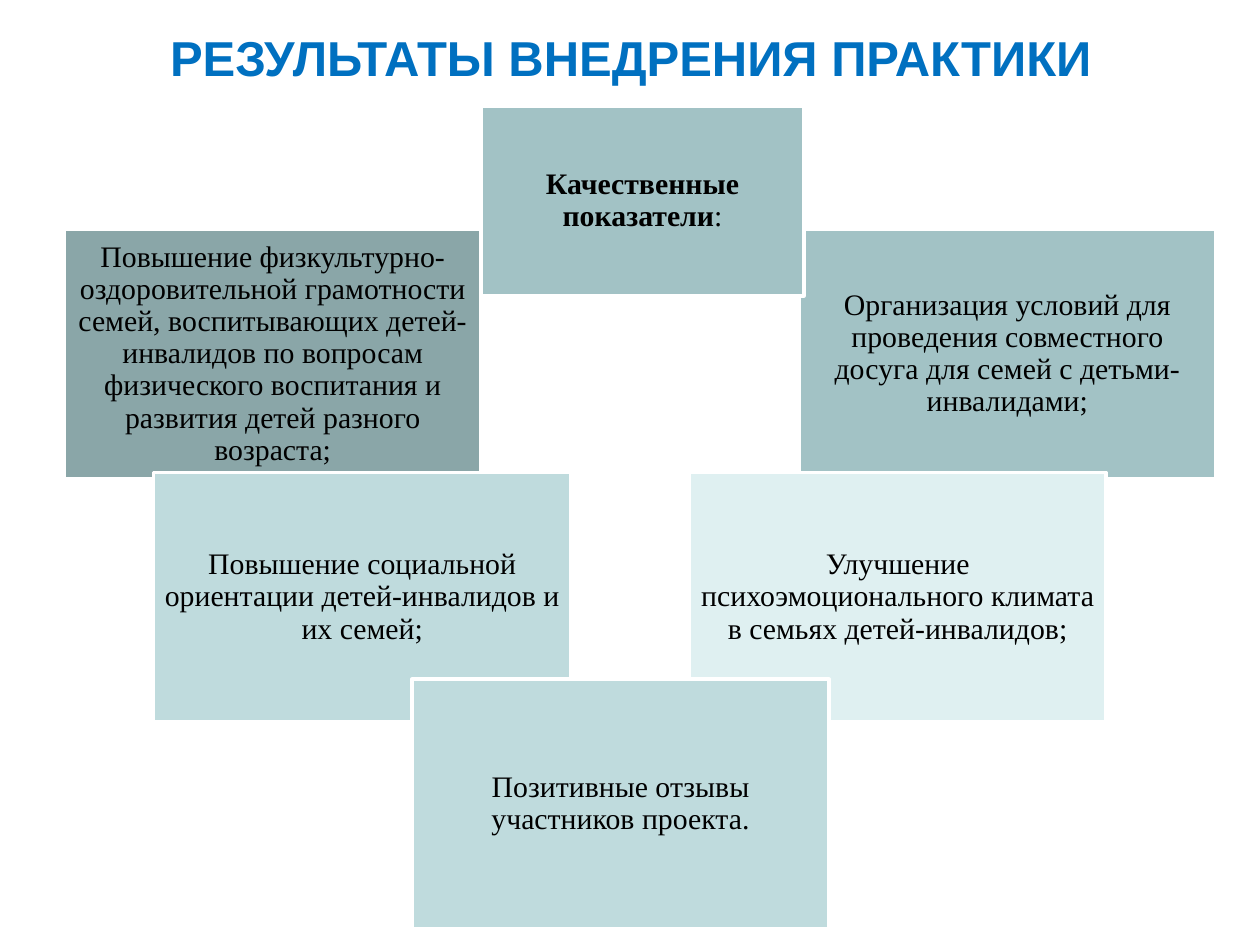
import pptx
import pptx.dml.color
import pptx.enum.shapes
import pptx.enum.text
import pptx.util

RGB = pptx.dml.color.RGBColor
BLUE = RGB(0x00, 0x70, 0xC0)
BLACK = RGB(0x00, 0x00, 0x00)
WHITE = RGB(0xFF, 0xFF, 0xFF)
SLATE = RGB(0x8A, 0xA6, 0xA8)
TEAL = RGB(0xA2, 0xC2, 0xC5)
MIST = RGB(0xBF, 0xDB, 0xDD)
PALE = RGB(0xDF, 0xF0, 0xF1)

SCALE = 9144
WIDE, HIGH = 331, 198
CARDS = [
    (51, 182, SLATE, "Повышение физкультурно-оздоровительной грамотности семей, "
     "воспитывающих детей-инвалидов по вопросам физического воспитания "
     "и развития детей разного возраста;"),
    (634, 182, TEAL, "Организация условий для проведения совместного досуга "
     "для семей с детьми-инвалидами;"),
    (122, 375, MIST, "Повышение социальной ориентации детей-инвалидов и их семей;"),
    (547, 375, PALE, "Улучшение психоэмоционального климата в семьях детей-инвалидов;"),
    (327, 539, MIST, "Позитивные отзывы участников проекта."),
]


class Deck:
    """Holds the style and the current slide, and draws each kind of element."""

    def __init__(self):
        self.file = pptx.Presentation()
        self.file.slide_width, self.file.slide_height = self.px(1000, 750)
        self.slide = self.file.slides.add_slide(self.file.slide_layouts[6])

    def px(self, *sizes):
        return [pptx.util.Emu(size * SCALE) for size in sizes]

    def style(self, run, font, size, color, bold=False):
        run.font.name = font
        run.font.size = pptx.util.Pt(size)
        run.font.color.rgb = color
        run.font.bold = bold

    def inset(self, frame, side, top):
        frame.margin_left = frame.margin_right = self.px(side)[0]
        frame.margin_top = frame.margin_bottom = self.px(top)[0]
        frame.word_wrap = True

    def title(self, x, y, w, h, text):
        frame = self.slide.shapes.add_textbox(*self.px(x, y, w, h)).text_frame
        self.inset(frame, 10, 9)
        frame.text = text
        para = frame.paragraphs[0]
        para.alignment = pptx.enum.text.PP_ALIGN.CENTER
        self.style(para.runs[0], "Arial", 28, BLUE, True)

    def card(self, x, y, w, h, fill, text):
        shape = self.slide.shapes.add_shape(
            pptx.enum.shapes.MSO_SHAPE.RECTANGLE, *self.px(x, y, w, h))
        shape.shadow.inherit = False
        shape.fill.solid()
        shape.fill.fore_color.rgb = fill
        shape.line.color.rgb = WHITE
        shape.line.width = pptx.util.Pt(2)
        frame = shape.text_frame
        self.inset(frame, 7, 7)
        frame.vertical_anchor = pptx.enum.text.MSO_ANCHOR.MIDDLE
        frame.text = text
        para = frame.paragraphs[0]
        para.alignment = pptx.enum.text.PP_ALIGN.CENTER
        para.line_spacing = 0.9
        self.style(para.runs[0], "Times New Roman", 17, BLACK)
        return para


def main():
    deck = Deck()
    deck.title(51, 13, 899, 77, "РЕЗУЛЬТАТЫ ВНЕДРЕНИЯ ПРАКТИКИ")
    for x, y, fill, text in CARDS:
        deck.card(x, y, WIDE, HIGH, fill, text)
    head = deck.card(382, 84, 256, 151, TEAL, "Качественные показатели")
    head.runs[0].font.bold = True
    colon = head.add_run()
    colon.text = ":"
    deck.style(colon, "Times New Roman", 17, BLACK)
    deck.file.save("out.pptx")


if __name__ == "__main__":
    main()
